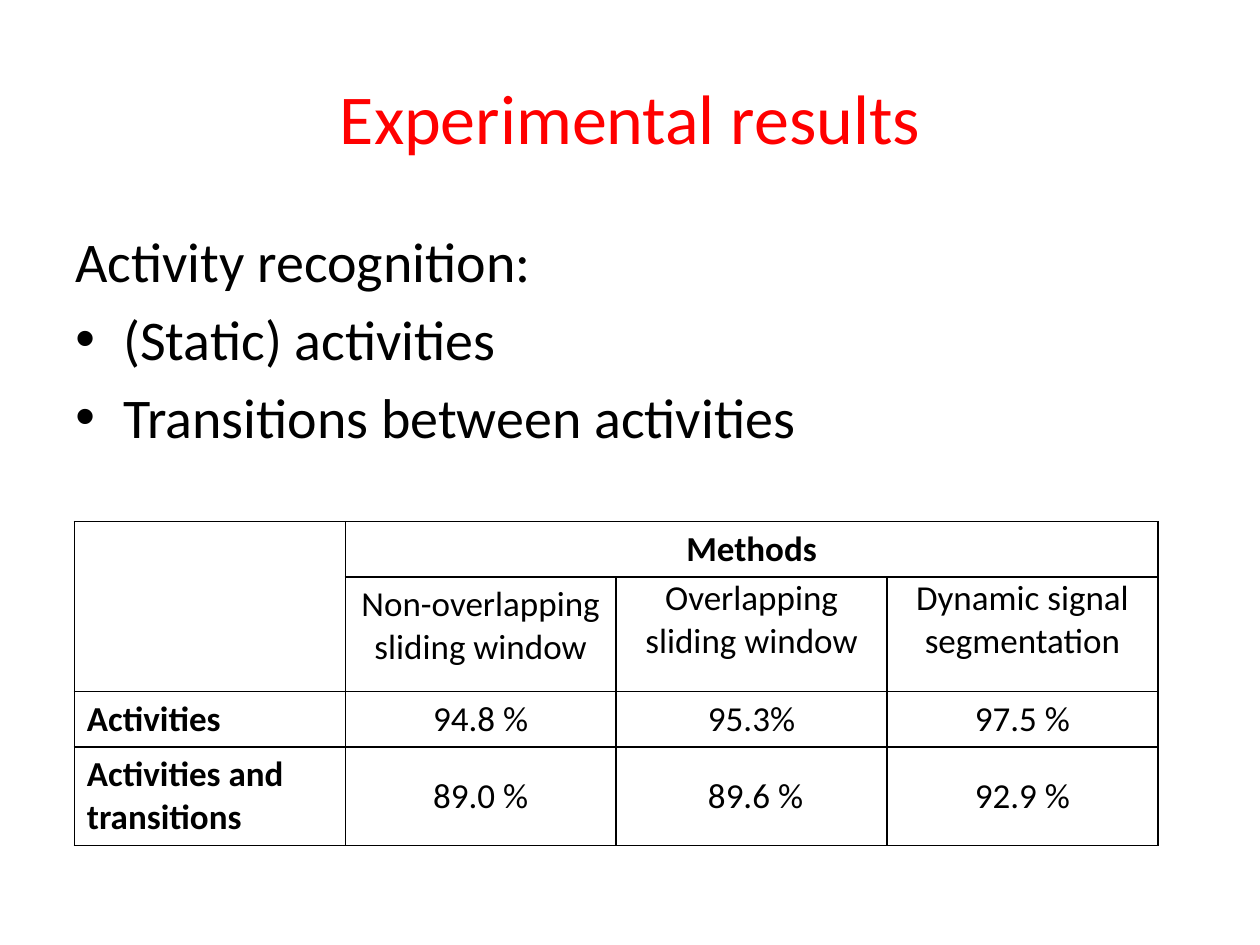
from lxml.etree import SubElement
from pptx import Presentation
from pptx.dml.color import RGBColor
from pptx.enum.text import MSO_ANCHOR as Anchor, PP_ALIGN as Align
from pptx.oxml.ns import qn
from pptx.util import Inches, Pt

TITLE = "Experimental results"
POINTS = [
    ("Activity recognition:", False),
    ("(Static) activities", True),
    ("Transitions between activities", True),
]
RESULTS = [
    ["", "Methods", "", ""],
    ["", "Non-overlapping sliding window", "Overlapping sliding window", "Dynamic signal segmentation"],
    ["Activities", "94.8 %", "95.3%", "97.5 %"],
    ["Activities and transitions", "89.0 %", " 89.6 %", "92.9 %"],
]
MERGES = [((0, 0), (1, 0)), ((0, 1), (0, 3))]
ROW_HEIGHTS = [0.44, 0.91, 0.44, 0.78]
COLUMN_WIDTH = 2.15
TIGHT = dict(margin_left=Inches(0.07), margin_right=Inches(0.07), margin_top=0, margin_bottom=0)
BLACK, RED = "000000", "FF0000"


def apply(target, values):
    for name, value in values.items():
        setattr(target, name, value)


def style(paragraph, size, color, bold=False, align=Align.LEFT):
    paragraph.alignment = align
    apply(paragraph.font, dict(name="Calibri", size=Pt(size), bold=bold))
    paragraph.font.color.rgb = RGBColor.from_string(color)


def add_borders(cell, color):
    properties = cell._tc.get_or_add_tcPr()
    for side in ("L", "R", "T", "B"):
        border = SubElement(properties, qn(f"a:ln{side}"), w=str(Pt(1)))
        SubElement(SubElement(border, qn("a:solidFill")), qn("a:srgbClr"), val=color)


def add_title(slide):
    title = slide.shapes.title
    apply(title, dict(left=Inches(0.5), top=Inches(0.3), width=Inches(9), height=Inches(1.25)))
    title.text_frame.text = TITLE
    title.text_frame.vertical_anchor = Anchor.MIDDLE
    style(title.text_frame.paragraphs[0], 40, RED, align=Align.CENTER)


def add_points(slide):
    frame = slide.shapes.add_textbox(Inches(0.5), Inches(1.75), Inches(9), Inches(2.2)).text_frame
    frame.word_wrap = True
    frame.text = "\n".join(text for text, _ in POINTS)
    for paragraph, (_, bulleted) in zip(frame.paragraphs, POINTS):
        style(paragraph, 32, BLACK)
        paragraph.space_before = Pt(6)
        properties = paragraph._p.get_or_add_pPr()
        properties.set("marL", str(Inches(0.38)))
        properties.set("indent", str(-Inches(0.38)))
        if bulleted:
            SubElement(properties, qn("a:buFont"), typeface="Arial")
            SubElement(properties, qn("a:buChar"), char="•")
            properties.append(properties.find(qn("a:defRPr")))


def add_results(slide):
    rows, columns = len(RESULTS), len(RESULTS[0])
    table = slide.shapes.add_table(
        rows, columns, Inches(0.59), Inches(4.14),
        Inches(COLUMN_WIDTH * columns), Inches(sum(ROW_HEIGHTS)),
    ).table
    apply(table, dict(first_row=False, horz_banding=False))
    for column in table.columns:
        column.width = Inches(COLUMN_WIDTH)
    for row, height in zip(table.rows, ROW_HEIGHTS):
        row.height = Inches(height)
    for start, end in MERGES:
        table.cell(*start).merge(table.cell(*end))
    for r, texts in enumerate(RESULTS):
        for c, text in enumerate(texts):
            cell = table.cell(r, c)
            add_borders(cell, BLACK)
            cell.fill.background()
            cell.text = text
            is_value = r > 1 and c > 0
            if is_value or (r == 1 and c > 1):
                apply(cell, TIGHT)
            cell.vertical_anchor = Anchor.MIDDLE if is_value else Anchor.TOP
            style(cell.text_frame.paragraphs[0], 20, BLACK,
                  bold=r == 0 or c == 0, align=Align.CENTER if c else Align.LEFT)


def main():
    deck = Presentation()
    apply(deck, dict(slide_width=Inches(10), slide_height=Inches(7.5)))
    slide = deck.slides.add_slide(deck.slide_layouts[5])
    add_title(slide)
    add_points(slide)
    add_results(slide)
    deck.save("out.pptx")


if __name__ == "__main__":
    main()
